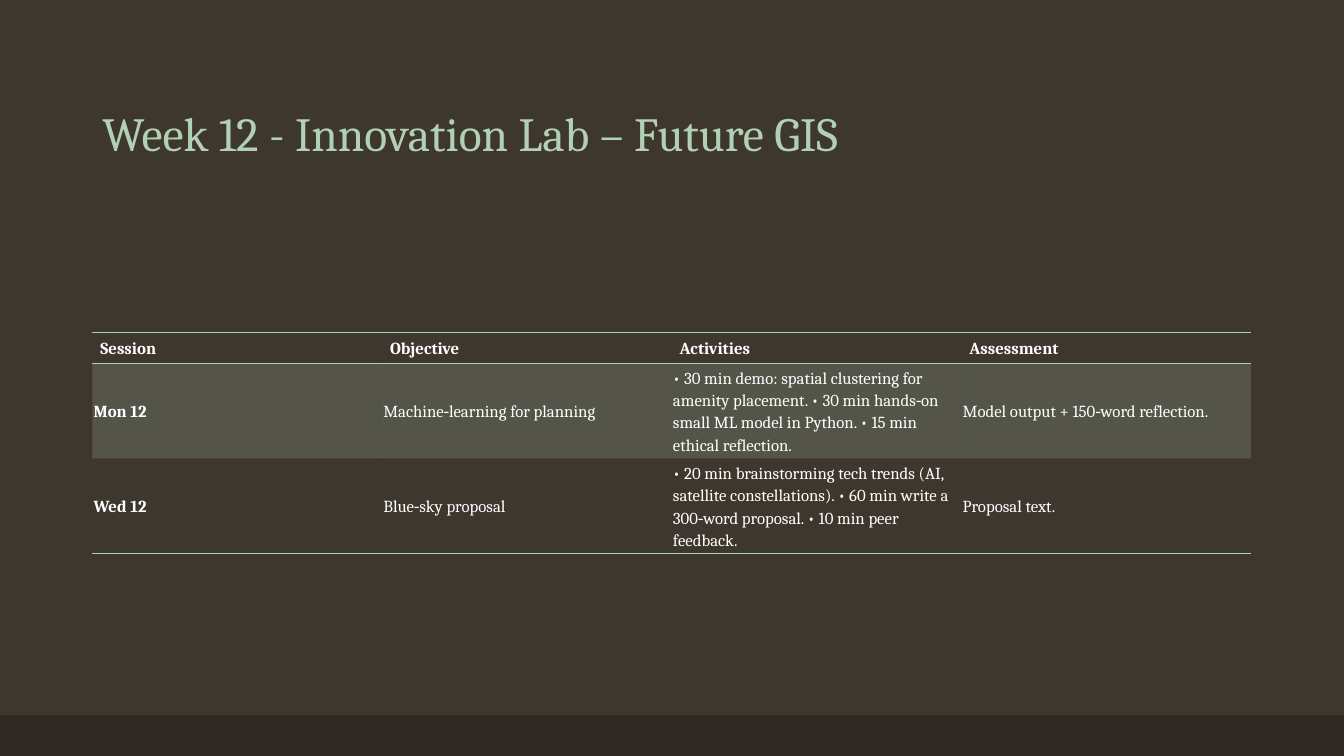
from lxml.etree import SubElement
from pptx import Presentation
from pptx.dml.color import RGBColor
from pptx.enum.shapes import MSO_SHAPE
from pptx.enum.text import MSO_ANCHOR
from pptx.oxml.ns import qn
from pptx.util import Cm, Pt

INK, ACCENT, GROUND, FOOTER = "FFFFFF", "B2D0B4", "3D372E", "2E2923"
LEFT, WIDTH = Cm(2.33), Cm(29.2)
ROW_HEIGHTS = [Cm(0.76), Cm(2.3), Cm(2.3)]
SESSIONS = [
    ["Session", "Objective", "Activities", "Assessment"],
    ["Mon 12", "Machine‑learning for planning",
     "• 30 min demo: spatial clustering for amenity placement. "
     "• 30 min hands‑on small ML model in Python. • 15 min ethical reflection.",
     "Model output + 150‑word reflection."],
    ["Wed 12", "Blue‑sky proposal",
     "• 20 min brainstorming tech trends (AI, satellite constellations). "
     "• 60 min write a 300‑word proposal. • 10 min peer feedback.",
     "Proposal text."],
]


def set_format(target, values):
    for name, value in values.items():
        setattr(target, name, value)


def paint(fill, color, opacity=100):
    fill.solid()
    fill.fore_color.rgb = RGBColor.from_string(color)
    if opacity < 100:
        for tone in fill._xPr.iter(qn("a:srgbClr")):
            SubElement(tone, qn("a:alpha"), val=str(opacity * 1000))


def write(frame, text, color, font, spacing):
    para = frame.paragraphs[0]
    set_format(para, spacing)
    span = para.add_run()
    span.text = text
    set_format(span.font, {"name": "Cambria", **font})
    span.font.color.rgb = RGBColor.from_string(color)


def add_footer(page, deck):
    height = Cm(1.02)
    bar = page.shapes.add_shape(
        MSO_SHAPE.RECTANGLE, 0, deck.slide_height - height, deck.slide_width, height)
    bar.shadow.inherit = False
    bar.line.fill.background()
    paint(bar.fill, FOOTER)


def add_title(page, text):
    box = page.shapes.add_textbox(LEFT, Cm(1.02), WIDTH, Cm(3.17))
    set_format(box.text_frame, {"word_wrap": True, "vertical_anchor": MSO_ANCHOR.BOTTOM})
    write(box.text_frame, text, ACCENT, {"size": Pt(34)}, {"line_spacing": 0.9})


def set_borders(cell, ruled_sides):
    properties = cell._tc.get_or_add_tcPr()
    for side in "LRTB":
        border = SubElement(properties, qn(f"a:ln{side}"), w=str(Pt(1)))
        if side in ruled_sides:
            solid = SubElement(border, qn("a:solidFill"))
            SubElement(solid, qn("a:srgbClr"), val=ACCENT)
        else:
            SubElement(border, qn("a:noFill"))


def add_schedule(page, rows):
    table = page.shapes.add_table(
        len(rows), len(rows[0]), LEFT, Cm(8.37), WIDTH, sum(ROW_HEIGHTS)).table
    set_format(table, {"first_row": False, "horz_banding": False})
    ruled = ["TB", "T", "B"]
    for row_index, texts in enumerate(rows):
        table.rows[row_index].height = ROW_HEIGHTS[row_index]
        header = row_index == 0
        side_margin, end_margin = (Cm(0.2), Cm(0.1)) if header else (Cm(0.03), Cm(0.03))
        for column_index, text in enumerate(texts):
            cell = table.cell(row_index, column_index)
            set_format(cell, {
                "vertical_anchor": MSO_ANCHOR.MIDDLE,
                "margin_left": side_margin, "margin_right": side_margin,
                "margin_top": end_margin, "margin_bottom": end_margin,
            })
            set_borders(cell, ruled[row_index])
            if row_index == 1:
                paint(cell.fill, ACCENT, 20)
            else:
                cell.fill.background()
            write(cell.text_frame, text, INK,
                  {"size": Pt(12), "bold": header or column_index == 0},
                  {"line_spacing": 1.15, "space_after": Pt(8)})


def main():
    deck = Presentation()
    set_format(deck, {"slide_width": Cm(33.87), "slide_height": Cm(19.05)})
    page = deck.slides.add_slide(deck.slide_layouts[6])
    paint(page.background.fill, GROUND)
    add_footer(page, deck)
    add_title(page, "Week 12 - Innovation Lab – Future GIS")
    add_schedule(page, SESSIONS)
    deck.save("out.pptx")


if __name__ == "__main__":
    main()
